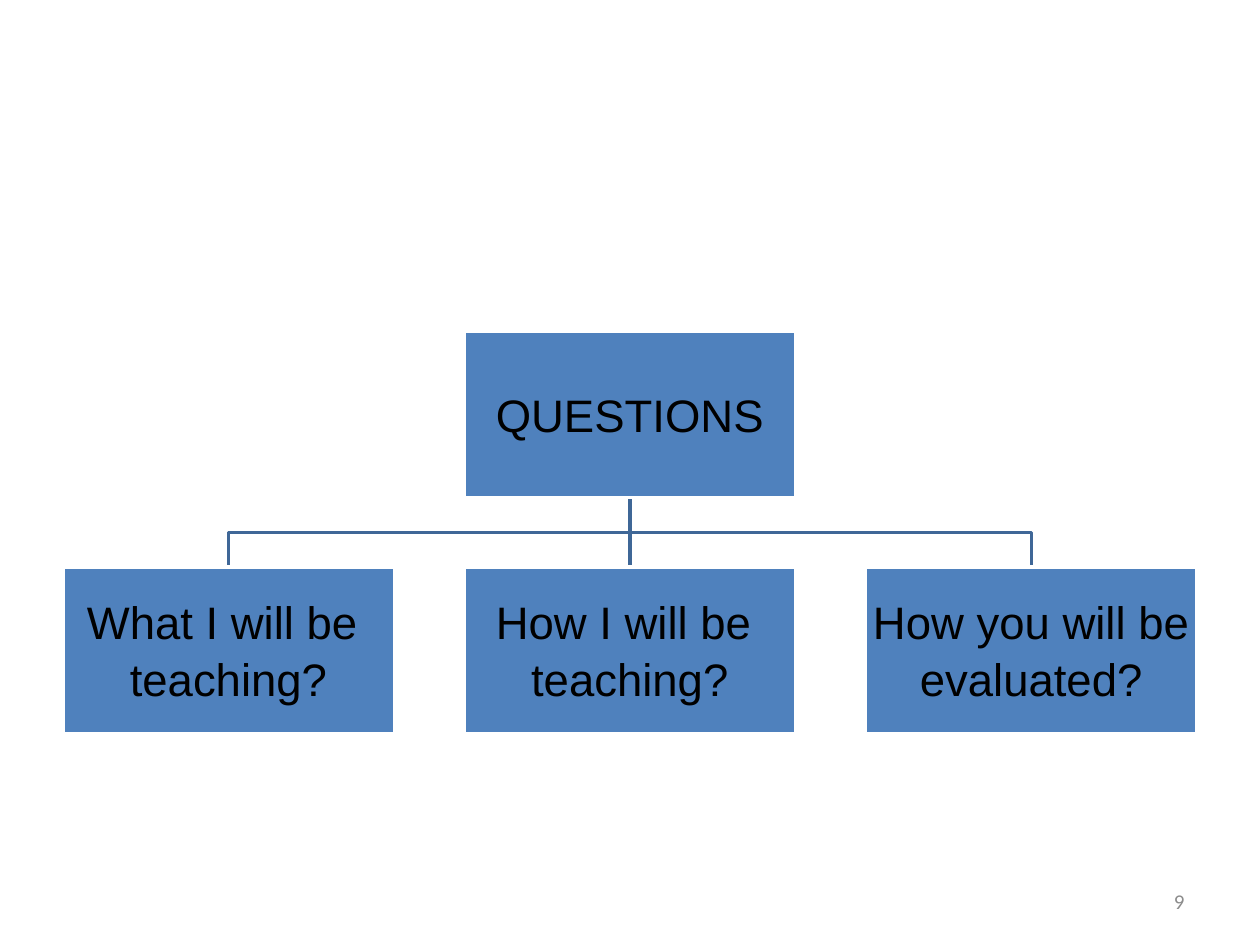
"""Build a slide with a small tree of course questions."""
from dataclasses import dataclass

from lxml.etree import SubElement
from pptx import Presentation
from pptx.dml.color import RGBColor
from pptx.enum.shapes import MSO_CONNECTOR, MSO_SHAPE
from pptx.enum.text import MSO_ANCHOR, PP_ALIGN
from pptx.oxml.ns import qn
from pptx.slide import Slide
from pptx.util import Inches, Pt

COLORS = {"box": "4F81BD", "edge": "FFFFFF", "branch": "3F6797",
          "text": "000000", "number": "8C8C8C"}
BOX_WIDTH, BOX_HEIGHT = 2.63, 1.32
ROOT_TOP, CHILD_TOP = 2.63, 4.5
CENTER, COLUMN_STEP = 5, 3.185


@dataclass
class Node:
    lines: list[str]
    center: float
    top: float


def color(name: str) -> RGBColor:
    return RGBColor.from_string(COLORS[name])


def style_line(line, name: str) -> None:
    line.color.rgb = color(name)
    line.width = Pt(2)


def draw_node(page: Slide, node: Node) -> None:
    box = page.shapes.add_shape(
        MSO_SHAPE.RECTANGLE, Inches(node.center - BOX_WIDTH / 2), Inches(node.top),
        Inches(BOX_WIDTH), Inches(BOX_HEIGHT))
    box.shadow.inherit = False
    box.fill.solid()
    box.fill.fore_color.rgb = color("box")
    style_line(box.line, "edge")
    frame = box.text_frame
    frame.word_wrap = True
    frame.vertical_anchor = MSO_ANCHOR.MIDDLE
    frame.margin_left = frame.margin_right = Inches(0.02)
    frame.margin_top = frame.margin_bottom = Inches(0.02)
    frame.text = "\n".join(node.lines)
    for para in frame.paragraphs:
        para.alignment = PP_ALIGN.CENTER
        para.space_before = Pt(1.5)
        para.font.name = "Arial"
        para.font.size = Pt(26)
        para.font.color.rgb = color("text")


def draw_branch(page: Slide, root: Node, child: Node) -> None:
    start = root.top + BOX_HEIGHT
    middle = (start + child.top) / 2
    if child.center == root.center:
        branch = page.shapes.add_connector(
            MSO_CONNECTOR.STRAIGHT, Inches(root.center), Inches(start),
            Inches(child.center), Inches(child.top))
        SubElement(branch.element.spPr, qn("a:effectLst"))
    else:
        corners = [(root.center, middle), (child.center, middle), (child.center, child.top)]
        builder = page.shapes.build_freeform(Inches(root.center), Inches(start))
        builder.add_line_segments([(Inches(x), Inches(y)) for x, y in corners], close=False)
        branch = builder.convert_to_shape()
        branch.fill.background()
        branch.shadow.inherit = False
    style_line(branch.line, "branch")


def draw_page_number(page: Slide, number: str) -> None:
    box = page.shapes.add_textbox(Inches(7.17), Inches(6.95), Inches(2.33), Inches(0.4))
    frame = box.text_frame
    frame.word_wrap = True
    frame.vertical_anchor = MSO_ANCHOR.MIDDLE
    frame.text = number
    para = frame.paragraphs[0]
    para.alignment = PP_ALIGN.RIGHT
    para.font.name = "Calibri"
    para.font.size = Pt(12)
    para.font.color.rgb = color("number")


def main() -> None:
    deck = Presentation()
    deck.slide_width, deck.slide_height = Inches(10), Inches(7.5)
    page = deck.slides.add_slide(deck.slide_layouts[6])
    root = Node(["QUESTIONS"], CENTER, ROOT_TOP)
    questions = [["What I will be ", "teaching?"],
                 ["How I will be ", "teaching?"],
                 ["How you will be", "evaluated?"]]
    children = [Node(lines, CENTER + (column - 1) * COLUMN_STEP, CHILD_TOP)
                for column, lines in enumerate(questions)]
    for child in reversed(children):
        draw_branch(page, root, child)
    for node in [root, *children]:
        draw_node(page, node)
    draw_page_number(page, "9")
    deck.save("out.pptx")


if __name__ == "__main__":
    main()
